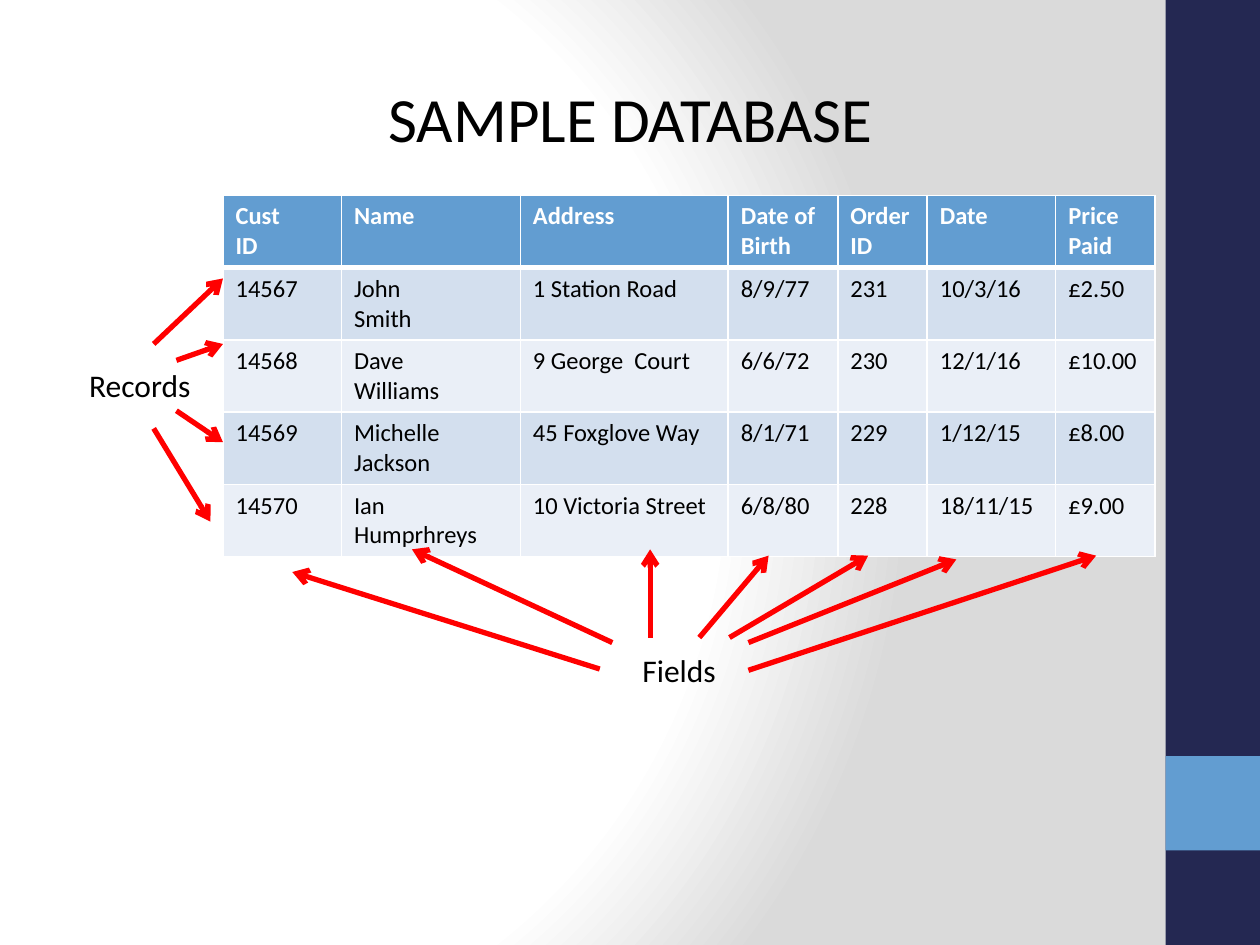
from dataclasses import dataclass

from lxml import etree
from pptx import Presentation
from pptx.dml.color import RGBColor
from pptx.enum.shapes import MSO_CONNECTOR, MSO_SHAPE
from pptx.enum.text import MSO_ANCHOR, PP_ALIGN
from pptx.oxml import parse_xml
from pptx.oxml.ns import nsdecls, qn
from pptx.util import Inches, Pt


@dataclass(frozen=True)
class Theme:
    font: str = "Calibri"
    title_size: int = 36
    label_size: int = 18
    cell_size: int = 14
    text: str = "000000"
    white: str = "FFFFFF"
    grey: str = "DADADA"
    navy: str = "242852"
    blue: str = "629DD1"
    bands: tuple = ("D3DFEE", "EAEFF7")
    arrow: str = "FF0000"


@dataclass(frozen=True)
class Box:
    """A region in grid units: one column or row is one inch."""
    left: float
    top: float
    width: float
    height: float

    def lengths(self):
        return [Inches(v) for v in (self.left, self.top, self.width, self.height)]

    def point(self, across, down):
        return Inches(self.left + across), Inches(self.top + down)


THEME = Theme()
COLUMNS = 10
ROWS = 7.5

COLUMN_WIDTHS = [0.94, 1.42, 1.65, 0.87, 0.71, 1.02, 0.79]
RECORDS = [
    ["Cust\nID", "Name", "Address", "Date of Birth", "Order ID", "Date", "Price Paid"],
    ["14567", "John\nSmith", "1 Station Road", "8/9/77", "231", "10/3/16", "£2.50"],
    ["14568", "Dave\nWilliams", "9 George  Court", "6/6/72", "230", "12/1/16", "£10.00"],
    ["14569", "Michelle Jackson", "45 Foxglove Way", "8/1/71", "229", "1/12/15", "£8.00"],
    ["14570", "Ian Humprhreys", "10 Victoria Street", "6/8/80", "228", "18/11/15", "£9.00"],
]

# Arrow start and tip, measured from the label's top left corner
FIELD_ARROWS = [
    ((-0.24, 0.19), (-2.68, -0.58)),
    ((-0.14, -0.02), (-1.73, -0.76)),
    ((0.16, -0.06), (0.16, -0.76)),
    ((0.94, 0.20), (3.70, -0.71)),
    ((0.94, -0.02), (2.59, -0.68)),
    ((0.79, -0.06), (1.89, -0.71)),
    ((0.55, -0.06), (1.10, -0.71)),
]
RECORD_ARROWS = [
    ((0.61, -0.13), (1.16, -0.65)),
    ((0.61, 0.54), (1.06, 1.28)),
    ((0.79, 0.40), (1.16, 0.65)),
    ((0.79, 0.00), (1.16, -0.13)),
]


def format_text(frame, size, color=THEME.text, bold=False):
    for para in frame.paragraphs:
        for span in para.runs:
            span.font.name = THEME.font
            span.font.size = Pt(size)
            span.font.bold = bold
            span.font.color.rgb = RGBColor.from_string(color)


def paint_background(page):
    page.background.fill.solid()
    stops = "".join(
        f'<a:gs pos="{share * 1000}"><a:srgbClr val="{color}"/></a:gs>'
        for share, color in ((0, THEME.white), (75, THEME.white), (100, THEME.grey)))
    gradient = parse_xml(
        f'<a:gradFill {nsdecls("a")} rotWithShape="1"><a:gsLst>{stops}</a:gsLst>'
        '<a:path path="circle"><a:fillToRect l="20000" t="50000" r="100000" b="50000"/>'
        '</a:path></a:gradFill>')
    properties = page._element.find(".//" + qn("p:bgPr"))
    properties.replace(properties.find(qn("a:solidFill")), gradient)


def add_side_band(page, box):
    # The accent square sits one square above the foot of the band
    square = Box(box.left, box.top + box.height - 2 * box.width, box.width, box.width)
    for part, color in ((box, THEME.navy), (square, THEME.blue)):
        bar = page.shapes.add_shape(MSO_SHAPE.RECTANGLE, *part.lengths())
        bar.shadow.inherit = False
        bar.fill.solid()
        bar.fill.fore_color.rgb = RGBColor.from_string(color)
        bar.line.fill.background()


def add_title(page, box):
    title = page.shapes.title
    title.left, title.top, title.width, title.height = box.lengths()
    frame = title.text_frame
    frame.text = "SAMPLE DATABASE"
    frame.vertical_anchor = MSO_ANCHOR.BOTTOM
    frame.paragraphs[0].alignment = PP_ALIGN.CENTER
    format_text(frame, THEME.title_size)


def set_borders(cell, top, bottom):
    properties = cell._tc.get_or_add_tcPr()
    for place, (side, width) in enumerate(
            (("L", 1), ("R", 1), ("T", top), ("B", bottom))):
        properties.insert(place, parse_xml(
            f'<a:ln{side} {nsdecls("a")} w="{Pt(width)}"><a:solidFill>'
            f'<a:srgbClr val="{THEME.white}"/></a:solidFill></a:ln{side}>'))


def add_records_table(page, box):
    table = page.shapes.add_table(
        len(RECORDS), len(COLUMN_WIDTHS), *box.lengths()).table
    for column, width in zip(table.columns, COLUMN_WIDTHS):
        column.width = Inches(width)
    for row, record in enumerate(RECORDS):
        header = row == 0
        fill = THEME.blue if header else THEME.bands[(row - 1) % 2]
        for column, value in enumerate(record):
            cell = table.cell(row, column)
            cell.text_frame.text = value
            format_text(cell.text_frame, THEME.cell_size,
                        THEME.white if header else THEME.text, header)
            cell.fill.solid()
            cell.fill.fore_color.rgb = RGBColor.from_string(fill)
            # A heavier rule parts the header from the records
            set_borders(cell, 3 if row == 1 else 1, 3 if header else 1)


def add_arrow(page, start, tip):
    arrow = page.shapes.add_connector(MSO_CONNECTOR.STRAIGHT, *start, *tip)
    arrow.line.width = Pt(3)
    arrow.line.color.rgb = RGBColor.from_string(THEME.arrow)
    etree.SubElement(arrow.line._get_or_add_ln(), qn("a:tailEnd"), type="arrow")
    etree.SubElement(arrow._element.spPr, qn("a:effectLst"))


def add_callout(page, box, label, arrows):
    frame = page.shapes.add_textbox(*box.lengths()).text_frame
    frame.word_wrap = False
    frame.text = label
    format_text(frame, THEME.label_size)
    for start, tip in arrows:
        add_arrow(page, box.point(*start), box.point(*tip))


def main():
    deck = Presentation()
    deck.slide_width = Inches(COLUMNS)
    deck.slide_height = Inches(ROWS)
    page = deck.slides.add_slide(deck.slide_layouts[5])

    paint_background(page)
    add_side_band(page, Box(COLUMNS - 0.75, 0, 0.75, ROWS))
    add_records_table(page, Box(1.77, 1.55, sum(COLUMN_WIDTHS), 2.85))
    add_title(page, Box(0.83, 0, 8.35, 1.28))
    add_callout(page, Box(0.61, 2.86, 1.01, 0.4), "Records", RECORD_ARROWS)
    add_callout(page, Box(5, 5.12, 0.79, 0.4), "Fields", FIELD_ARROWS)
    deck.save("out.pptx")


if __name__ == "__main__":
    main()
